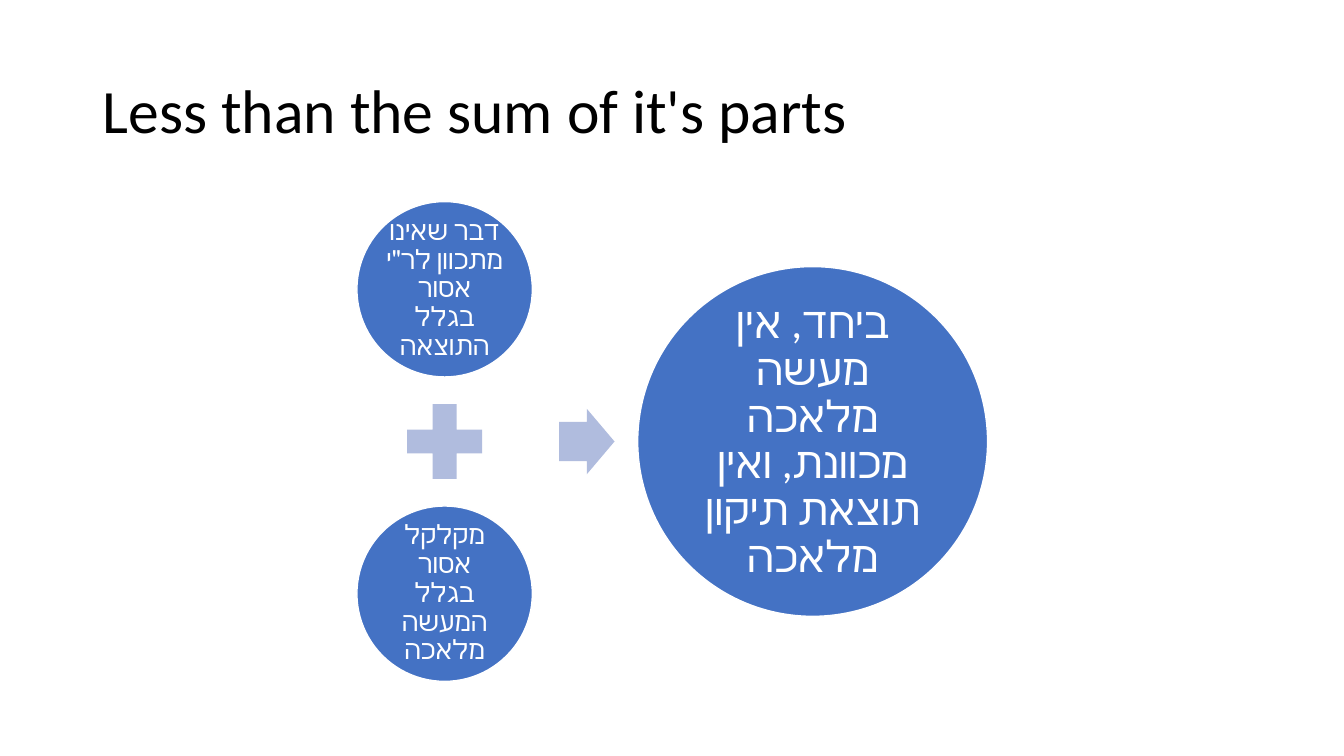
from lxml import etree
from pptx import Presentation, util as u
from pptx.dml.color import RGBColor
from pptx.enum import shapes, text
from pptx.oxml.ns import qn


def color(value):
    return RGBColor.from_string(value)


def write(frame, words, size, ink, align, inset, font="Calibri"):
    frame.word_wrap = True
    frame.vertical_anchor = text.MSO_ANCHOR.MIDDLE
    frame.margin_left = frame.margin_right = u.Inches(inset[0])
    frame.margin_top = frame.margin_bottom = u.Inches(inset[1])
    para = frame.paragraphs[0]
    para.alignment = align
    para.line_spacing = 0.9
    para._p.get_or_add_pPr().set("rtl", "1")
    span = para.add_run()
    span.text = words
    span.font.size = u.Pt(size)
    span.font.name = font
    span.font.color.rgb = color(ink)
    complex_font = etree.SubElement(span._r.get_or_add_rPr(), qn("a:cs"))
    complex_font.set("typeface", font)


class Diagram:
    main = "4472C4"
    pale = "B0BCDE"
    light = "FFFFFF"
    dark = "000000"

    def __init__(self, page):
        self.page = page

    def title(self, words, left, top, width, height):
        box = self.page.shapes.add_textbox(*map(u.Inches, (left, top, width, height)))
        write(box.text_frame, words, size=44, ink=self.dark,
              align=text.PP_ALIGN.LEFT, inset=(0.1, 0.05))

    def shape(self, kind, center_x, center_y, width, height, fill):
        corner = center_x - width / 2, center_y - height / 2
        shape = self.page.shapes.add_shape(kind, *map(u.Inches, (*corner, width, height)))
        shape.shadow.inherit = False
        shape.fill.solid()
        shape.fill.fore_color.rgb = color(fill)
        shape.line.fill.background()
        return shape

    def circle(self, words, center_x, center_y, diameter, size, inset):
        circle = self.shape(shapes.MSO_SHAPE.OVAL, center_x, center_y,
                            diameter, diameter, self.main)
        circle.line.color.rgb = color(self.light)
        circle.line.width = u.Pt(1)
        write(circle.text_frame, words, size=size, ink=self.light,
              align=text.PP_ALIGN.CENTER, inset=(inset, inset))

    def plus(self, center_x, center_y, side):
        self.shape(shapes.MSO_SHAPE.MATH_PLUS, center_x, center_y, side, side, self.pale)

    def arrow(self, center_x, center_y, width, height):
        arrow = self.shape(shapes.MSO_SHAPE.RIGHT_ARROW, center_x, center_y,
                           width, height, self.pale)
        arrow.adjustments[0] = 0.6
        arrow.adjustments[1] = 0.5


def main():
    deck = Presentation()
    deck.slide_width, deck.slide_height = u.Inches(13.33), u.Inches(7.5)
    diagram = Diagram(deck.slides.add_slide(deck.slide_layouts[6]))
    parts_x, middle_y, step = 4.41, 4.38, 1.51

    diagram.title("Less than the sum of it's parts", 0.92, 0.4, 11.5, 1.45)
    diagram.circle("דבר שאינו מתכוון לר״י אסור בגלל התוצאה",
                   parts_x, middle_y - step, 1.74, size=19, inset=0.03)
    diagram.plus(parts_x, middle_y, 1.01)
    diagram.circle("מקלקל אסור בגלל המעשה מלאכה",
                   parts_x, middle_y + step, 1.74, size=19, inset=0.03)
    diagram.arrow(5.82, middle_y, 0.55, 0.65)
    diagram.circle("ביחד, אין מעשה מלאכה מכוונת, ואין תוצאת תיקון מלאכה",
                   8.06, middle_y, 3.47, size=31, inset=0.04)
    deck.save("out.pptx")


if __name__ == "__main__":
    main()
